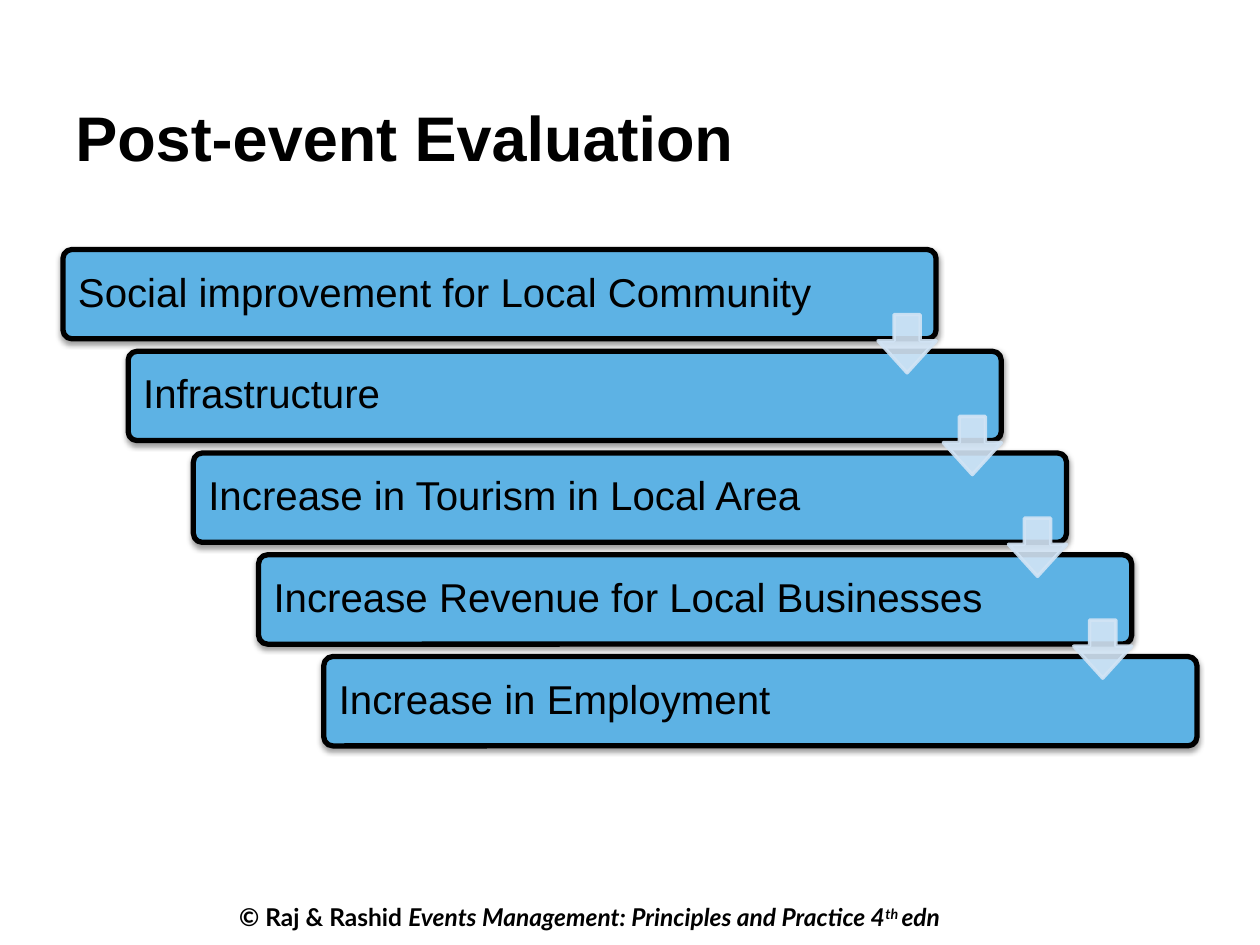
from lxml import etree
from pptx import Presentation
from pptx import util as u
from pptx.dml.color import RGBColor
from pptx.enum import shapes, text
from pptx.oxml.ns import qn

BLACK, STEP_BLUE, ARROW_BLUE = "000000", "5DB2E4", "D2E4F5"
STEPS = [
    "Social improvement for Local Community",
    "Infrastructure",
    "Increase in Tourism in Local Area",
    "Increase Revenue for Local Businesses",
    "Increase in Employment",
]
CITATION = [
    ("© Raj & Rashid ", {}),
    ("Events Management: Principles and Practice 4", {"italic": True}),
    ("th ", {"italic": True, "baseline": 30}),
    ("edn", {"italic": True}),
]


def color(hex_value):
    return RGBColor.from_string(hex_value)


def add_text(paragraph, wording, font="Arial", size=23, bold=False, italic=False, baseline=0):
    run = paragraph.add_run()
    run.text = wording
    run.font.name = font
    run.font.size = u.Pt(size)
    run.font.bold = bold
    run.font.italic = italic
    run.font.color.rgb = color(BLACK)
    if baseline:
        run.font._element.set("baseline", str(baseline * 1000))


def add_alpha(fill_color, percent):
    etree.SubElement(fill_color, qn("a:alpha"), val=str(percent * 1000))


def add_block(slide, preset, box, adjustments, fill, line, width):
    block = slide.shapes.add_shape(preset, *(u.Inches(length) for length in box))
    for index, value in enumerate(adjustments):
        block.adjustments[index] = value
    block.fill.solid()
    block.fill.fore_color.rgb = color(fill)
    block.line.color.rgb = color(line)
    block.line.width = u.Pt(width)
    block.shadow.inherit = False
    return block


def add_step(slide, box, wording):
    step = add_block(slide, shapes.MSO_SHAPE.ROUNDED_RECTANGLE, box, [0.1], STEP_BLUE, BLACK, 3)
    effects = step._element.spPr.find(qn("a:effectLst"))
    shadow = etree.SubElement(
        effects, qn("a:outerShdw"), blurRad=str(u.Pt(3.1)), dist=str(u.Pt(1.6)),
        dir="5400000", rotWithShape="0")
    add_alpha(etree.SubElement(shadow, qn("a:srgbClr"), val=BLACK), 38)
    frame = step.text_frame
    frame.word_wrap = True
    frame.vertical_anchor = text.MSO_ANCHOR.MIDDLE
    frame.margin_left = frame.margin_right = u.Inches(0.1)
    label = frame.paragraphs[0]
    label.alignment = text.PP_ALIGN.LEFT
    label.line_spacing = 0.9
    add_text(label, wording)


def add_arrow(slide, box):
    arrow = add_block(slide, shapes.MSO_SHAPE.DOWN_ARROW, box, [0.45, 0.55],
                      ARROW_BLUE, ARROW_BLUE, 2)
    for fill_color in arrow._element.spPr.iter(qn("a:srgbClr")):
        add_alpha(fill_color, 90)


def add_staircase(slide, left, top, width, height):
    step_width, step_height = 0.77 * width, 0.18 * height
    shift = (width - step_width) / (len(STEPS) - 1)
    pitch = (height - step_height) / (len(STEPS) - 1)
    arrow_size = 0.65 * step_height
    for index, wording in enumerate(STEPS):
        add_step(slide, (left + index * shift, top + index * pitch, step_width, step_height),
                 wording)
    for index in range(len(STEPS) - 1):
        arrow_left = left + index * shift + step_width - arrow_size
        arrow_top = top + index * pitch + 0.73 * step_height
        add_arrow(slide, (arrow_left, arrow_top, arrow_size, arrow_size))


def add_title(slide, left, top, width, height):
    title = slide.shapes.add_textbox(*map(u.Inches, (left, top, width, height)))
    title.text_frame.word_wrap = True
    add_text(title.text_frame.paragraphs[0], "Post-event Evaluation", size=36, bold=True)


def add_footer(slide, left, top, width, height):
    footer = slide.shapes.add_textbox(*map(u.Inches, (left, top, width, height)))
    footer.text_frame.word_wrap = False
    footer.text_frame.auto_size = text.MSO_AUTO_SIZE.SHAPE_TO_FIT_TEXT
    for wording, style in CITATION:
        add_text(footer.text_frame.paragraphs[0], wording, font="Lato", size=14, bold=True, **style)


def main():
    deck = Presentation()
    deck.slide_width, deck.slide_height = u.Inches(10), u.Inches(7.5)
    slide = deck.slides.add_slide(deck.slide_layouts[6])
    add_footer(slide, 1.8, 7.11, 6.97, 0.34)
    add_title(slide, 0.5, 0.73, 9, 1.05)
    add_staircase(slide, 0.5, 1.98, 9, 3.94)
    deck.save("out.pptx")


if __name__ == "__main__":
    main()
